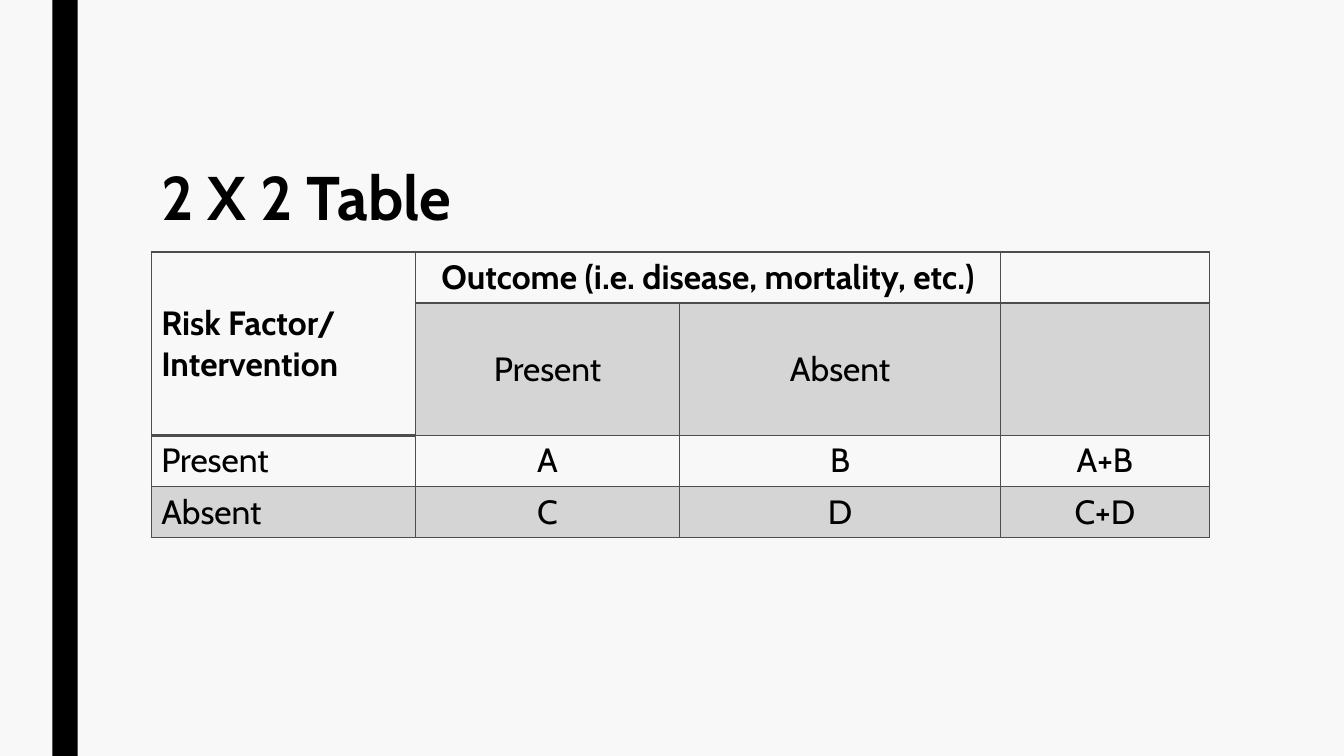
from dataclasses import dataclass

from lxml.etree import SubElement
from pptx import Presentation
from pptx.dml.color import RGBColor as Rgb
from pptx.enum.shapes import MSO_SHAPE as Shape
from pptx.enum.text import MSO_ANCHOR as Anchor, MSO_AUTO_SIZE as AutoSize, PP_ALIGN as Align
from pptx.oxml.ns import qn
from pptx.util import Cm, Pt

TITLE = "2 X 2 Table"
ROWS = [
    ["Risk Factor/ Intervention", "Outcome (i.e. disease, mortality, etc.)", "", ""],
    ["", "Present", "Absent", ""],
    ["Present", "A", "B", "A+B"],
    ["Absent", "C", "D", "C+D"],
]
MERGES = [((0, 0), (1, 0)), ((0, 1), (0, 2))]
SHADED = {(1, 1), (1, 2), (1, 3), (3, 0), (3, 1), (3, 2), (3, 3)}
COLUMN_WIDTHS = [6.66, 6.66, 8.08, 5.27]
ROW_HEIGHTS = [1.29, 3.33, 1.29, 1.29]
LEFT = 3.81
TABLE_TOP = 6.35


@dataclass(frozen=True)
class Theme:
    font: str = "Cabin"
    title_size: int = 44
    cell_size: int = 24
    paper: str = "F8F8F8"
    ink: str = "000000"
    grid: str = "4D4D4D"
    shade_alpha: int = 20


THEME = Theme()


def style_text(para, size, bold, align):
    para.alignment = align
    for span in para.runs:
        span.font.name = THEME.font
        span.font.size = Pt(size)
        span.font.bold = bold
        span.font.color.rgb = Rgb.from_string(THEME.ink)


def add_borders(cell, bottom_width):
    properties = cell._tc.get_or_add_tcPr()
    for side, width in {"L": 1, "R": 1, "T": 1, "B": bottom_width}.items():
        line = SubElement(properties, qn(f"a:ln{side}"), w=str(Pt(width)))
        fill = SubElement(line, qn("a:solidFill"))
        SubElement(fill, qn("a:srgbClr"), val=THEME.grid)


def shade(cell):
    cell.fill.solid()
    cell.fill.fore_color.rgb = Rgb.from_string(THEME.grid)
    color = cell._tc.tcPr.find(".//" + qn("a:solidFill") + "[last()]")
    color = cell._tc.tcPr.find(qn("a:solidFill")).find(qn("a:srgbClr"))
    SubElement(color, qn("a:alpha"), val=str(THEME.shade_alpha * 1000))


def add_bar(page, height):
    bar = page.shapes.add_shape(Shape.RECTANGLE, Cm(1.32), 0, Cm(0.64), height)
    bar.shadow.inherit = False
    bar.fill.solid()
    bar.fill.fore_color.rgb = Rgb.from_string(THEME.ink)
    bar.line.fill.background()


def add_title(page):
    title = page.shapes.title
    title.left, title.top = Cm(LEFT), Cm(1.91)
    title.width, title.height = Cm(sum(COLUMN_WIDTHS)), Cm(4.11)
    frame = title.text_frame
    frame.text = TITLE
    frame.word_wrap = True
    frame.auto_size = AutoSize.NONE
    frame.vertical_anchor = Anchor.BOTTOM
    para = frame.paragraphs[0]
    para.line_spacing = 0.89
    style_text(para, THEME.title_size, True, Align.LEFT)


def add_grid(page):
    table = page.shapes.add_table(
        len(ROWS), len(COLUMN_WIDTHS), Cm(LEFT), Cm(TABLE_TOP),
        Cm(sum(COLUMN_WIDTHS)), Cm(sum(ROW_HEIGHTS)),
    ).table
    table.first_row = table.horz_banding = False
    for column, width in zip(table.columns, COLUMN_WIDTHS):
        column.width = Cm(width)
    for row, height in zip(table.rows, ROW_HEIGHTS):
        row.height = Cm(height)
    for start, end in MERGES:
        table.cell(*start).merge(table.cell(*end))
    for r, texts in enumerate(ROWS):
        for c, text in enumerate(texts):
            cell = table.cell(r, c)
            add_borders(cell, 2 if r == 0 or (r, c) == (1, 0) else 1)
            if (r, c) in SHADED:
                shade(cell)
            else:
                cell.fill.background()
            if text:
                cell.text_frame.text = text
            cell.vertical_anchor = Anchor.MIDDLE
            align = Align.LEFT if c == 0 else Align.CENTER
            style_text(cell.text_frame.paragraphs[0], THEME.cell_size, r == 0, align)


def main():
    deck = Presentation()
    deck.slide_width, deck.slide_height = Cm(33.87), Cm(19.05)
    page = deck.slides.add_slide(deck.slide_layouts[5])
    page.background.fill.solid()
    page.background.fill.fore_color.rgb = Rgb.from_string(THEME.paper)
    add_bar(page, deck.slide_height)
    add_title(page)
    add_grid(page)
    deck.save("out.pptx")


if __name__ == "__main__":
    main()
